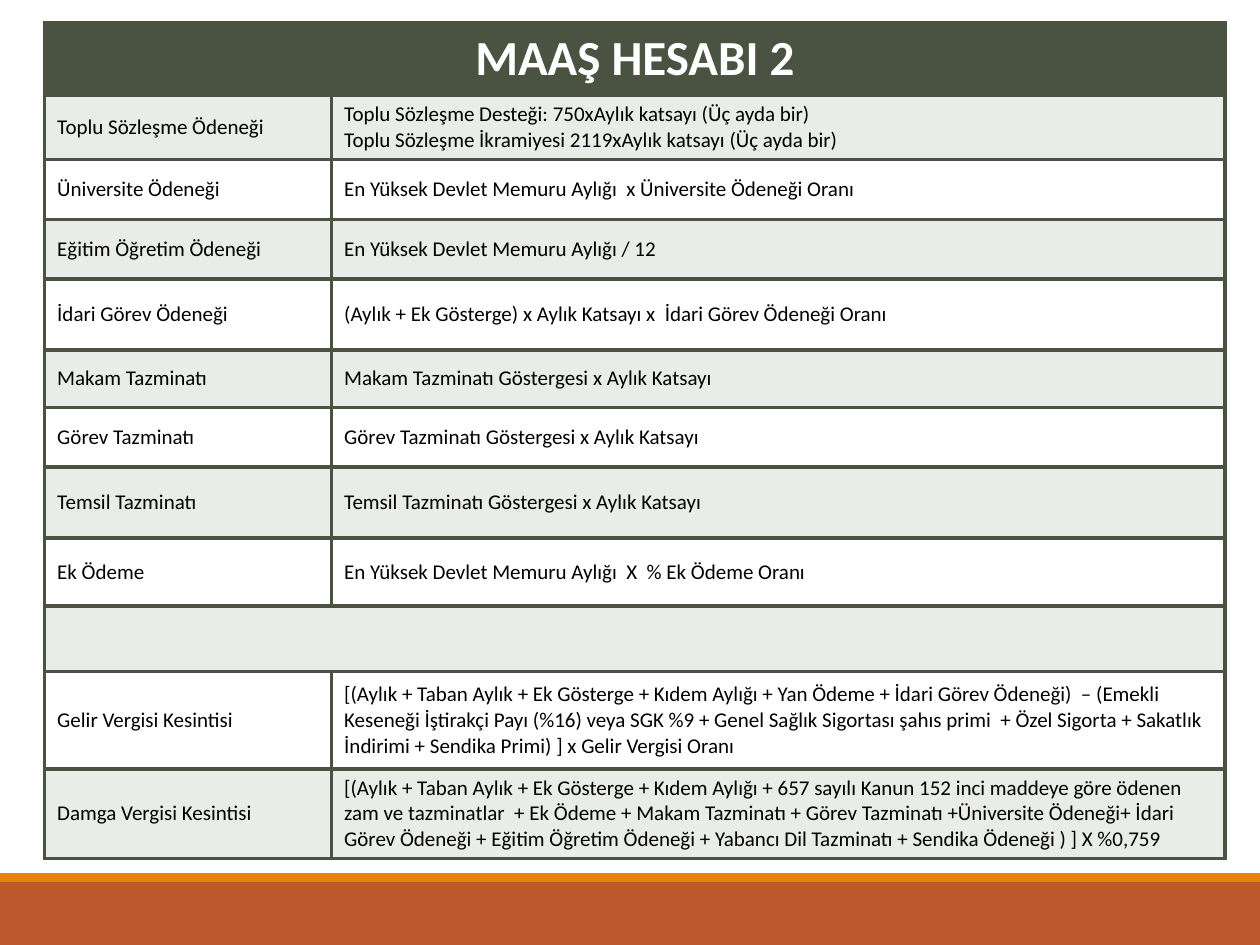
import lxml.etree
import pptx
import pptx.dml.color
import pptx.enum.shapes
import pptx.enum.text
import pptx.oxml.ns
import pptx.util

Pt = pptx.util.Pt
qn = pptx.oxml.ns.qn

COLORS = {
    "olive": "4A5242",
    "sage": "94A088",
    "rust": "BD582C",
    "orange": "E48312",
    "white": "FFFFFF",
    "black": "000000",
}
TITLE = "MAAŞ HESABI 2"
PAY_ROWS = [
    ("Toplu Sözleşme Ödeneği",
     "Toplu Sözleşme Desteği: 750xAylık katsayı (Üç ayda bir)\n"
     "Toplu Sözleşme İkramiyesi 2119xAylık katsayı (Üç ayda bir)"),
    ("Üniversite Ödeneği", "En Yüksek Devlet Memuru Aylığı  x Üniversite Ödeneği Oranı"),
    ("Eğitim Öğretim Ödeneği", "En Yüksek Devlet Memuru Aylığı / 12"),
    ("İdari Görev Ödeneği", "(Aylık + Ek Gösterge) x Aylık Katsayı x  İdari Görev Ödeneği Oranı"),
    ("Makam Tazminatı", "Makam Tazminatı Göstergesi x Aylık Katsayı"),
    ("Görev Tazminatı", "Görev Tazminatı Göstergesi x Aylık Katsayı"),
    ("Temsil Tazminatı", "Temsil Tazminatı Göstergesi x Aylık Katsayı"),
    ("Ek Ödeme", "En Yüksek Devlet Memuru Aylığı  X  % Ek Ödeme Oranı"),
    None,
    ("Gelir Vergisi Kesintisi",
     "[(Aylık + Taban Aylık + Ek Gösterge + Kıdem Aylığı + Yan Ödeme + İdari Görev Ödeneği)  – "
     "(Emekli Keseneği İştirakçi Payı (%16) veya SGK %9 + Genel Sağlık Sigortası şahıs primi  + "
     "Özel Sigorta + Sakatlık İndirimi + Sendika Primi) ] x Gelir Vergisi Oranı"),
    ("Damga Vergisi Kesintisi",
     "[(Aylık + Taban Aylık + Ek Gösterge + Kıdem Aylığı + 657 sayılı Kanun 152 inci maddeye göre "
     "ödenen zam ve tazminatlar  + Ek Ödeme + Makam Tazminatı + Görev Tazminatı +Üniversite Ödeneği+ "
     "İdari Görev Ödeneği + Eğitim Öğretim Ödeneği + Yabancı Dil Tazminatı + Sendika Ödeneği ) ] X %0,759"),
]
COLUMN_WIDTHS = [164, 510.5]
ROW_HEIGHTS = [41.5, 36.5, 34.5, 34, 40.5, 33, 34, 40.5, 39, 37.5, 55.5, 51]


def rgb(name):
    """Return the named colour."""
    return pptx.dml.color.RGBColor.from_string(COLORS[name])


def set_fill(fill, name, opacity=None):
    """Fill with a named colour, at a given percentage of opacity."""
    fill.solid()
    fill.fore_color.rgb = rgb(name)
    if opacity is not None:
        color = fill._xPr.find(qn("a:solidFill")).find(qn("a:srgbClr"))
        lxml.etree.SubElement(color, qn("a:alpha"), val=str(opacity * 1000))


def set_borders(cell, name, width):
    """Draw one kind of line on all four sides of a cell."""
    properties = cell._tc.get_or_add_tcPr()
    for side in ("lnL", "lnR", "lnT", "lnB"):
        line = lxml.etree.SubElement(properties, qn(f"a:{side}"), w=str(Pt(width)))
        solid = lxml.etree.SubElement(line, qn("a:solidFill"))
        lxml.etree.SubElement(solid, qn("a:srgbClr"), val=COLORS[name])


def write_cell(cell, text, size, color, bold=False):
    """Write text in a cell and format its runs."""
    cell.text_frame.text = text
    for paragraph in cell.text_frame.paragraphs:
        for run in paragraph.runs:
            run.font.name = "Calibri"
            run.font.size = Pt(size)
            run.font.bold = bold
            run.font.color.rgb = rgb(color)


def add_salary_table(slide, left, top, width, height):
    """Add the table of pay items and their formulas."""
    rows = [None] + PAY_ROWS
    table = slide.shapes.add_table(
        len(rows), len(COLUMN_WIDTHS), Pt(left), Pt(top), Pt(width), Pt(height)
    ).table
    table.first_row = table.horz_banding = False
    for column, column_width in zip(table.columns, COLUMN_WIDTHS):
        column.width = Pt(column_width)
    for index, (row, row_height, texts) in enumerate(zip(table.rows, ROW_HEIGHTS, rows)):
        row.height = Pt(row_height)
        for cell in row.cells:
            set_borders(cell, "olive", 2.25)
            if index == 0:
                set_fill(cell.fill, "olive")
            elif index % 2:
                set_fill(cell.fill, "sage", 20)
            else:
                cell.fill.background()
        if texts is None:
            table.cell(index, 0).merge(table.cell(index, 1))
            continue
        for cell, text in zip(row.cells, texts):
            cell.vertical_anchor = pptx.enum.text.MSO_ANCHOR.MIDDLE
            write_cell(cell, text, 12, "black")
    header = table.cell(0, 0)
    write_cell(header, TITLE, 28, "white", bold=True)
    header.text_frame.paragraphs[0].alignment = pptx.enum.text.PP_ALIGN.CENTER


def add_footer(slide, left, top, width, height):
    """Add the footer band with a thin stripe along its top."""
    stripe = 5
    bands = [("rust", top + stripe, height - stripe), ("orange", top, stripe)]
    for color, band_top, band_height in bands:
        shape = slide.shapes.add_shape(
            pptx.enum.shapes.MSO_SHAPE.RECTANGLE,
            Pt(left), Pt(band_top), Pt(width), Pt(band_height),
        )
        shape.shadow.inherit = False
        set_fill(shape.fill, color)
        shape.line.fill.background()


def main():
    """Build and save the presentation."""
    presentation = pptx.Presentation()
    presentation.slide_width = Pt(720)
    presentation.slide_height = Pt(540)
    slide = presentation.slides.add_slide(presentation.slide_layouts[6])
    add_footer(slide, 0, 499, 720, 41)
    add_salary_table(slide, 25.5, 13, sum(COLUMN_WIDTHS), sum(ROW_HEIGHTS))
    presentation.save("out.pptx")


if __name__ == "__main__":
    main()
